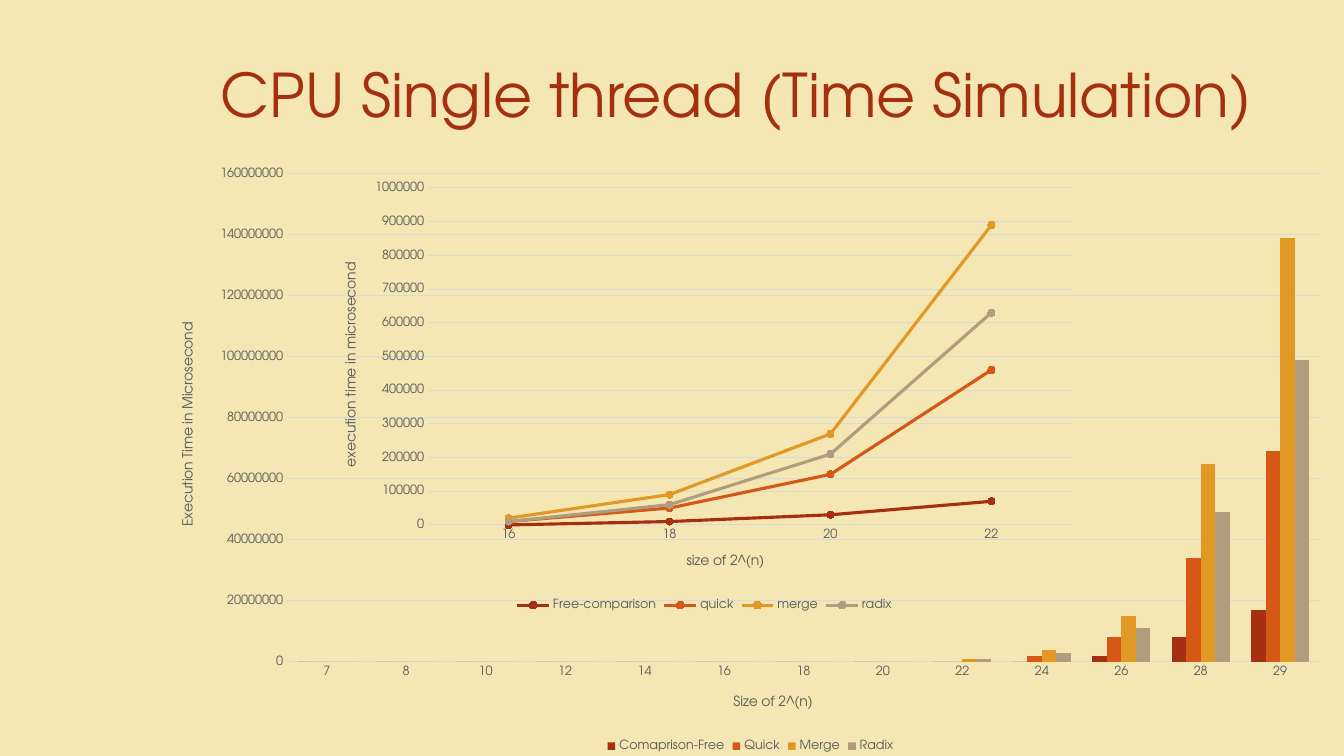
import pptx
import pptx.util
import pptx.chart.data
import pptx.dml.color
import pptx.enum.chart
import pptx.enum.text
import pptx.oxml
import pptx.oxml.ns

FONT = "TeX Gyre Adventor"
BACKGROUND, TITLE_COLOR, LABEL_COLOR, GRID_COLOR = "F5E7B4", "A5300F", "595959", "D9D9D9"
SERIES_COLORS = ["A5300F", "D55816", "E19825", "B19C7D"]
CHART_TYPE = pptx.enum.chart.XL_CHART_TYPE

# Content: lengths in px, boxes as left, top, width, height
HEADING = "CPU Single thread (Time Simulation)"
HEADING_BOX = (211, 30, 1102, 126)
CHARTS = [
    {
        "type": CHART_TYPE.COLUMN_CLUSTERED,
        "box": (158, 156, 1185, 600),
        "plot": (287, 174, 1033, 488),
        "size_title": ("Size of 2^(n)", 731, 692),
        "time_title": ("Execution Time in Microsecond", 178, 320),
        "maximum": 160000000, "step": 20000000,
        "sizes": ["7", "8", "10", "12", "14", "16", "18", "20", "22", "24", "26", "28", "29"],
        "times": {
            "Comaprison-Free": [0] * 10 + [2000000, 8000000, 17000000],
            "Quick": [0] * 9 + [2000000, 8000000, 34000000, 69000000],
            "Merge": [0] * 8 + [1000000, 4000000, 15000000, 65000000, 139000000],
            "Radix": [0] * 8 + [1000000, 3000000, 11000000, 49000000, 99000000],
        },
    },
    {
        "type": CHART_TYPE.LINE_MARKERS,
        "box": (322, 174, 765, 441),
        "plot": (428, 188, 644, 337),
        "size_title": ("size of 2^(n)", 684, 551),
        "time_title": ("execution time in microsecond", 341, 260),
        "maximum": 1000000, "step": 100000,
        "sizes": ["16", "18", "20", "22"],
        "times": {
            "Free-comparison": [0, 10000, 30000, 70000],
            "quick": [10000, 50000, 150000, 460000],
            "merge": [20000, 90000, 270000, 890000],
            "radix": [10000, 60000, 210000, 630000],
        },
    },
]


def px(length):
    return pptx.util.Emu(round(length * 914400 / 100.8))


def rgb(color):
    return pptx.dml.color.RGBColor.from_string(color)


def style_font(font, size, color):
    font.name, font.size, font.bold = FONT, pptx.util.Pt(size), False
    font.color.rgb = rgb(color)


def style_line(line, color, width):
    line.color.rgb = rgb(color)
    line.width = pptx.util.Pt(width)


def place(parent, index, chart_box, left, top, size=None):
    """Set a manual layout inside a chart, as fractions of its box."""
    chart_left, chart_top, chart_width, chart_height = chart_box
    fractions = {"x": (left - chart_left) / chart_width, "y": (top - chart_top) / chart_height}
    target = ""
    if size:
        target = '<c:layoutTarget val="inner"/>'
        fractions.update(w=size[0] / chart_width, h=size[1] / chart_height)
    modes = '<c:xMode val="edge"/><c:yMode val="edge"/>'
    values = "".join(f'<c:{key} val="{value:.4f}"/>' for key, value in fractions.items())
    for old_layout in parent.findall(pptx.oxml.ns.qn("c:layout")):
        parent.remove(old_layout)
    parent.insert(index, pptx.oxml.parse_xml(
        f'<c:layout {pptx.oxml.ns.nsdecls("c")}><c:manualLayout>'
        f"{target}{modes}{values}</c:manualLayout></c:layout>"))


def style_axis(axis, title, chart_box):
    text, left, top = title
    frame = axis.axis_title.text_frame
    frame.text = text
    style_font(frame.paragraphs[0].runs[0].font, 10, LABEL_COLOR)
    place(axis.axis_title._element, 1, chart_box, left, top)
    axis.major_tick_mark = axis.minor_tick_mark = pptx.enum.chart.XL_TICK_MARK.NONE
    style_font(axis.tick_labels.font, 9, LABEL_COLOR)
    return frame


def add_timing_chart(slide, content):
    box = content["box"]
    data = pptx.chart.data.CategoryChartData()
    data.categories = content["sizes"]
    for name, times in content["times"].items():
        data.add_series(name, times)
    chart = slide.shapes.add_chart(content["type"], *map(px, box), data).chart
    style_font(chart.font, 10, "000000")
    chart.has_title = False

    # Legend
    chart.has_legend = True
    chart.legend.position = pptx.enum.chart.XL_LEGEND_POSITION.BOTTOM
    chart.legend.include_in_layout = False
    style_font(chart.legend.font, 9, LABEL_COLOR)

    # Axes
    is_column = content["type"] == CHART_TYPE.COLUMN_CLUSTERED
    size_axis, time_axis = chart.category_axis, chart.value_axis
    style_axis(size_axis, content["size_title"], box)
    time_frame = style_axis(time_axis, content["time_title"], box)
    time_body = time_frame._txBody.find(pptx.oxml.ns.qn("a:bodyPr"))
    time_body.set("rot", "-5400000")
    time_body.set("vert", "horz")
    time_axis.minimum_scale, time_axis.maximum_scale = 0, content["maximum"]
    time_axis.major_unit = content["step"]
    time_axis.has_major_gridlines = True
    style_line(time_axis.major_gridlines.format.line, GRID_COLOR, 0.75)
    time_axis.format.line.fill.background()
    if is_column:
        size_axis.format.line.fill.background()
    else:
        style_line(size_axis.format.line, GRID_COLOR, 0.75)

    # Plot and series
    left, top, *size = content["plot"]
    place(chart._chartSpace.chart.plotArea, 0, box, left, top, size)
    plot = chart.plots[0]
    plot.vary_by_categories = False
    if is_column:
        plot.gap_width, plot.overlap = 150, 0
    for series, color in zip(plot.series, SERIES_COLORS):
        if is_column:
            series.format.fill.solid()
            series.format.fill.fore_color.rgb = rgb(color)
            continue
        series.smooth = False
        style_line(series.format.line, color, 2.25)
        series.marker.style = pptx.enum.chart.XL_MARKER_STYLE.CIRCLE
        series.marker.size = 5
        series.marker.format.fill.solid()
        series.marker.format.fill.fore_color.rgb = rgb(color)
        style_line(series.marker.format.line, color, 0.75)


def main():
    deck = pptx.Presentation()
    deck.slide_width, deck.slide_height = px(1344), px(756)
    slide = deck.slides.add_slide(deck.slide_layouts[6])
    slide.background.fill.solid()
    slide.background.fill.fore_color.rgb = rgb(BACKGROUND)

    # Heading
    heading = slide.shapes.add_textbox(*map(px, HEADING_BOX)).text_frame
    heading.word_wrap = True
    heading.vertical_anchor = pptx.enum.text.MSO_ANCHOR.MIDDLE
    heading.text = HEADING
    style_font(heading.paragraphs[0].runs[0].font, 43, TITLE_COLOR)

    # Charts, the line chart lying over the column chart
    for content in CHARTS:
        add_timing_chart(slide, content)
    deck.save("out.pptx")


if __name__ == "__main__":
    main()
